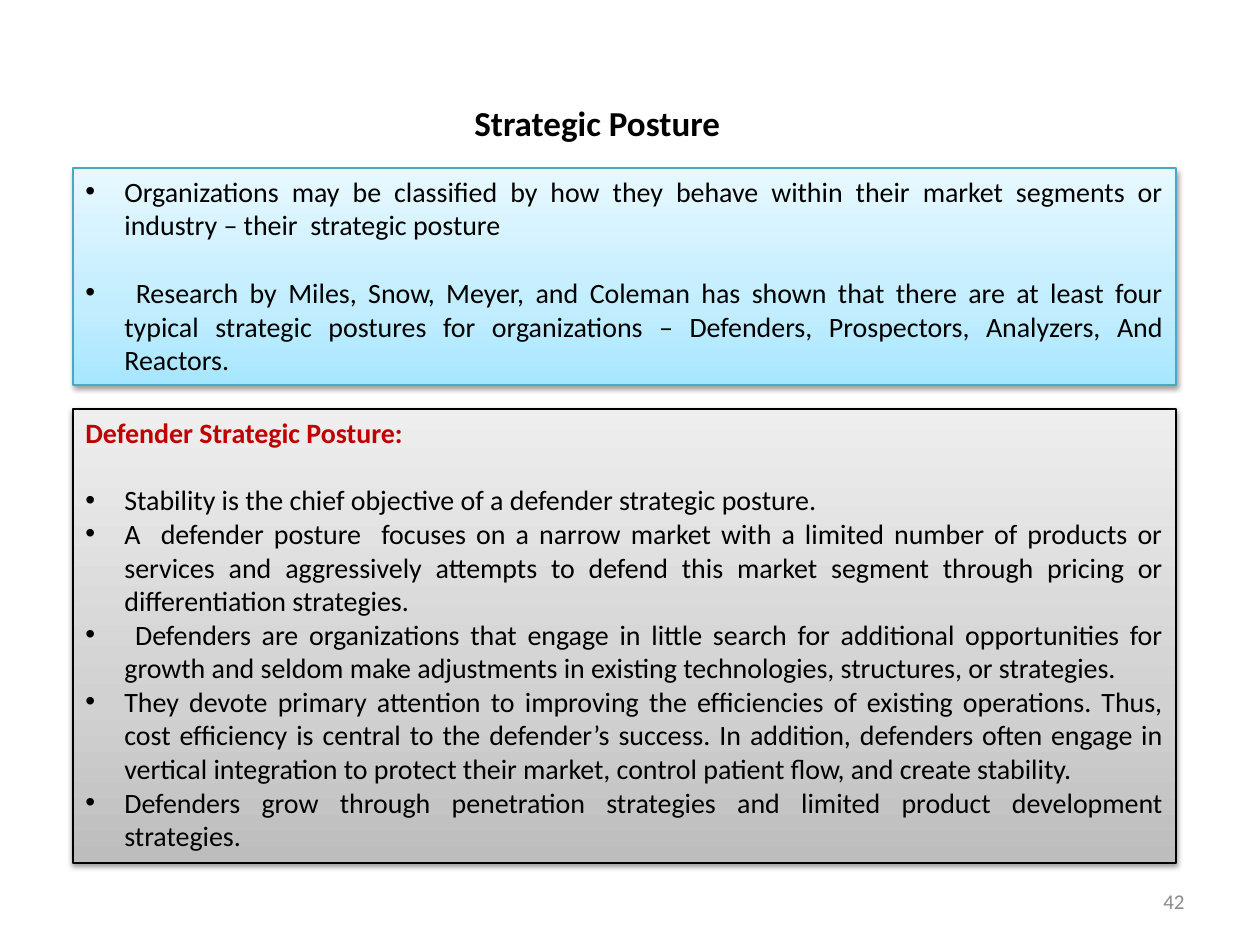
"""Build the Strategic Posture slide."""
import pptx
import pptx.dml.color
import pptx.enum.shapes
import pptx.enum.text
import pptx.oxml
import pptx.oxml.ns
import pptx.util
from lxml import etree

RGBColor = pptx.dml.color.RGBColor
ALIGN = pptx.enum.text.PP_ALIGN
ANCHOR = pptx.enum.text.MSO_ANCHOR
BLACK = RGBColor(0x00, 0x00, 0x00)
RED = RGBColor(0xC0, 0x00, 0x00)
GREY = RGBColor(0x8C, 0x8C, 0x8C)
TEAL = RGBColor(0x46, 0xAA, 0xC5)
SKY = [(0, RGBColor(0xA7, 0xE6, 0xFF)), (35, RGBColor(0xC1, 0xED, 0xFF)),
       (100, RGBColor(0xE7, 0xF8, 0xFF))]
SILVER = [(0, RGBColor(0xBD, 0xBD, 0xBD)), (35, RGBColor(0xD1, 0xD1, 0xD1)),
          (100, RGBColor(0xEE, 0xEE, 0xEE))]

BODY = {"size": pptx.util.Pt(16), "name": "Calibri", "bold": False}
HEADING = {**BODY, "bold": True}
TITLE = {**HEADING, "size": pptx.util.Pt(20)}
NUMBER = {**BODY, "size": pptx.util.Pt(12)}
LINE_GAP = 19.5

TITLE_TEXT = "Strategic Posture"
PAGE_NUMBER = "42"
PANELS = [
    {"top": 168, "height": 217, "stops": SKY, "outline": TEAL, "heading": None,
     "gap": LINE_GAP, "bullets": [
         "Organizations may be classiﬁed by how they behave within their market segments or "
         "industry – their  strategic posture",
         " Research by Miles, Snow, Meyer, and Coleman has shown that there are at least four "
         "typical strategic postures for organizations – Defenders, Prospectors, Analyzers, "
         "And Reactors."]},
    {"top": 409, "height": 454, "stops": SILVER, "outline": BLACK,
     "heading": "Defender Strategic Posture:", "gap": 0, "bullets": [
         "Stability is the chief objective of a defender strategic posture.",
         "A  defender posture  focuses on a narrow market with a limited number of products or "
         "services and aggressively attempts to defend this market segment through pricing or "
         "differentiation strategies.",
         " Defenders are organizations that engage in little search for additional "
         "opportunities for growth and seldom make adjustments in existing technologies, "
         "structures, or strategies.",
         "They devote primary attention to improving the efﬁciencies of existing operations. "
         "Thus, cost efﬁciency is central to the defender’s success. In addition, defenders "
         "often engage in vertical integration to protect their market, control patient ﬂow, "
         "and create stability.",
         "Defenders grow through penetration strategies and limited product development "
         "strategies."]},
]
PANEL_LEFT, PANEL_WIDTH, INDENT = 73, 1103, 39


def px(length):
    return pptx.util.Emu(round(length * 914400 / 126))


def add_xml(parent, tag, **attributes):
    return etree.SubElement(parent, pptx.oxml.ns.qn(tag), attributes)


def write(paragraph, text, font, color, align):
    paragraph.alignment = align
    run = paragraph.add_run()
    run.text = text
    for key, value in font.items():
        setattr(run.font, key, value)
    run.font.color.rgb = color


def add_label(slide, box, text, font, color, align, anchor, wrap):
    frame = slide.shapes.add_textbox(*map(px, box)).text_frame
    frame.word_wrap = wrap
    frame.vertical_anchor = anchor
    write(frame.paragraphs[0], text, font, color, align)


def add_gradient(shape, stops):
    shape.fill.gradient()
    gradient = shape.fill._fill._gradFill
    stop_list = gradient.find(pptx.oxml.ns.qn("a:gsLst"))
    for stop in list(stop_list):
        stop_list.remove(stop)
    for position, color in stops:
        stop = add_xml(stop_list, "a:gs", pos=str(position * 1000))
        add_xml(stop, "a:srgbClr", val=str(color))
    gradient.find(pptx.oxml.ns.qn("a:lin")).set("ang", str(270 * 60000))


def add_shadow(shape):
    shape.shadow.inherit = False
    effects = shape._element.spPr.find(pptx.oxml.ns.qn("a:effectLst"))
    shadow = add_xml(effects, "a:outerShdw", blurRad="40000", dist="20000",
                     dir="5400000", rotWithShape="0")
    add_xml(add_xml(shadow, "a:srgbClr", val=str(BLACK)), "a:alpha", val="38000")


def add_bullet(paragraph):
    properties = paragraph._p.get_or_add_pPr()
    properties.set("marL", str(px(INDENT)))
    properties.set("indent", str(-px(INDENT)))
    add_xml(properties, "a:buFont", typeface="Arial")
    add_xml(properties, "a:buChar", char="•")


def add_panel(slide, panel):
    shape = slide.shapes.add_shape(
        pptx.enum.shapes.MSO_SHAPE.RECTANGLE,
        *map(px, (PANEL_LEFT, panel["top"], PANEL_WIDTH, panel["height"])))
    add_gradient(shape, panel["stops"])
    shape.line.color.rgb = panel["outline"]
    shape.line.width = pptx.util.Pt(0.75)
    add_shadow(shape)
    frame = shape.text_frame
    frame.word_wrap = True
    frame.vertical_anchor = ANCHOR.TOP
    paragraph = frame.paragraphs[0]
    if panel["heading"]:
        write(paragraph, panel["heading"], HEADING, RED, ALIGN.JUSTIFY)
        paragraph.space_after = pptx.util.Pt(LINE_GAP)
        paragraph = frame.add_paragraph()
    for index, bullet in enumerate(panel["bullets"]):
        if index:
            paragraph = frame.add_paragraph()
            paragraph.space_before = pptx.util.Pt(panel["gap"])
        write(paragraph, bullet, BODY, BLACK, ALIGN.JUSTIFY)
        add_bullet(paragraph)


def main():
    deck = pptx.Presentation()
    deck.slide_width, deck.slide_height = px(1260), px(945)
    slide = deck.slides.add_slide(deck.slide_layouts[6])
    add_label(slide, (903, 876, 294, 50), PAGE_NUMBER, NUMBER, GREY,
              ALIGN.RIGHT, ANCHOR.MIDDLE, True)
    add_label(slide, (462, 95, 281, 55), TITLE_TEXT, TITLE, BLACK,
              ALIGN.LEFT, ANCHOR.TOP, False)
    for panel in PANELS:
        add_panel(slide, panel)
    deck.save("out.pptx")


if __name__ == "__main__":
    main()
